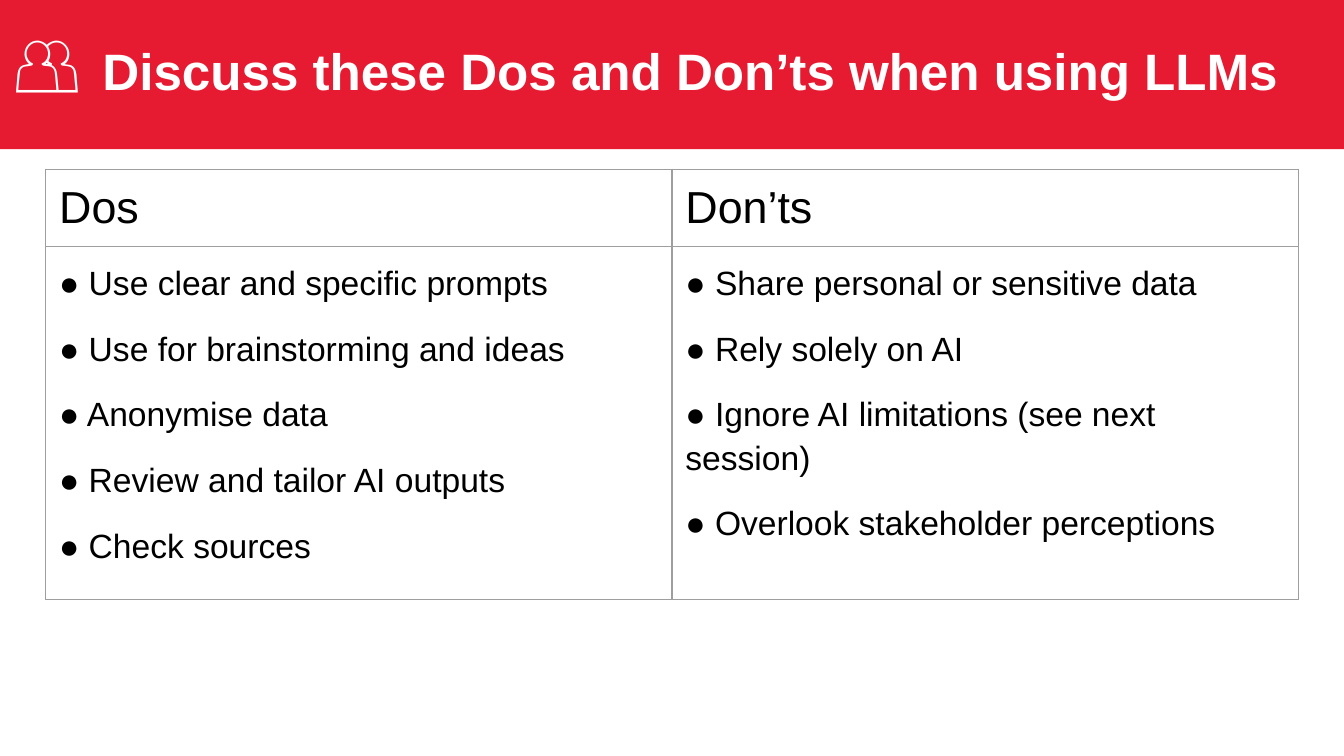
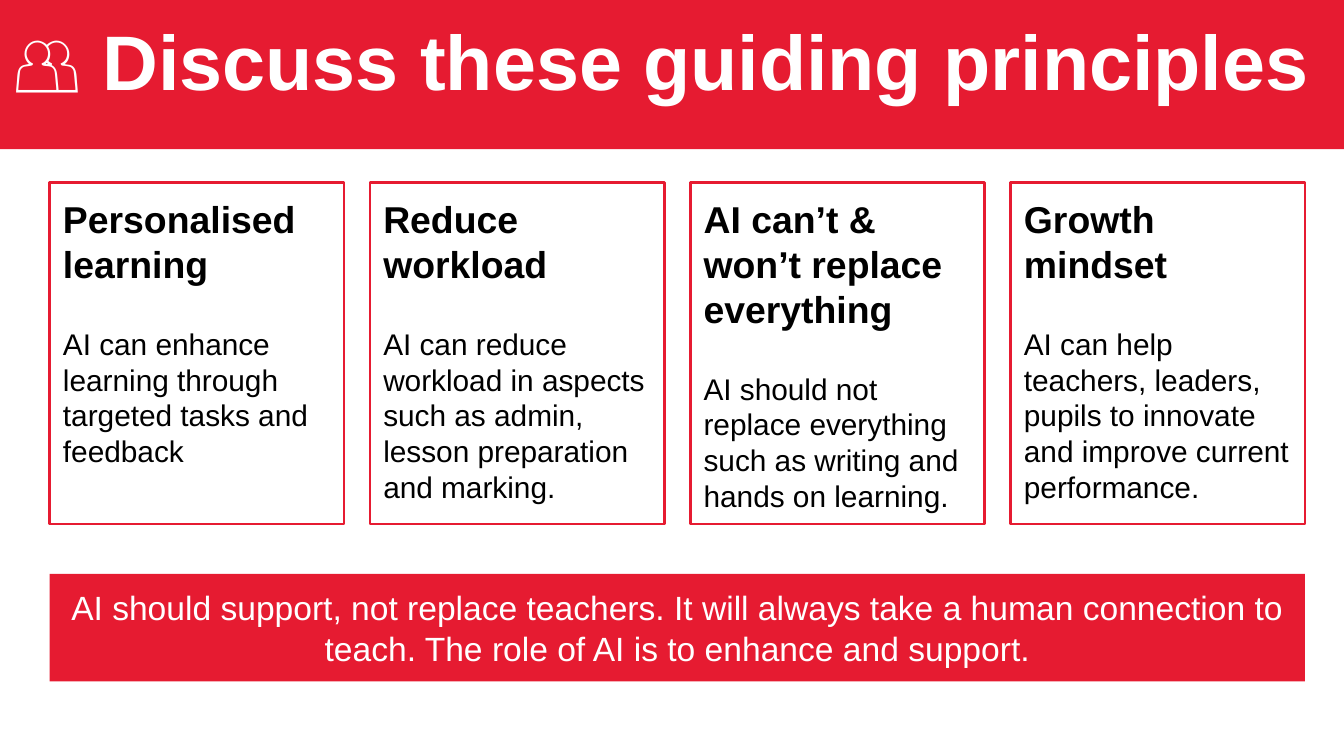
from dataclasses import dataclass

from lxml.etree import SubElement
from pptx import Presentation
from pptx.dml.color import RGBColor
from pptx.enum.shapes import MSO_SHAPE
from pptx.enum.text import MSO_ANCHOR, PP_ALIGN
from pptx.oxml.ns import qn
from pptx.util import Inches, Pt


@dataclass(frozen=True)
class Theme:
    font: str = "Arial"
    red: RGBColor = RGBColor(0xE6, 0x1B, 0x31)
    white: RGBColor = RGBColor(0xFF, 0xFF, 0xFF)
    black: RGBColor = RGBColor(0, 0, 0)
    grid: str = "9E9E9E"
    title: float = 41.4
    long_title: float = 27.4
    column_head: float = 24
    card_head: float = 20
    body: float = 18
    card_body: float = 16
    card_gap: float = 21.2
    bullet_gap: float = 12
    bullet_leading: float = 1.15
    grid_line: float = 0.75
    card_line: float = 1.5


THEME = Theme()
WIDTH = 10
HEIGHT = WIDTH * 9 / 16
BAND_HEIGHT = 1.11
PADDING = Inches(0.1)

ICON = "👥 "
DOS_TITLE = "Discuss these Dos and Don’ts when using LLMs"
ADVICE = {
    "Dos": [
        "Use clear and specific prompts",
        "Use for brainstorming and ideas",
        "Anonymise data",
        "Review and tailor AI outputs",
        "Check sources",
    ],
    "Don’ts": [
        "Share personal or sensitive data",
        "Rely solely on AI",
        "Ignore AI limitations (see next session)",
        "Overlook stakeholder perceptions",
    ],
}
ADVICE_LEFT, ADVICE_TOP = 0.34, 1.26
ADVICE_COLUMN = 4.66
ADVICE_ROWS = (0.57, 2.63)

PRINCIPLES_TITLE = "Discuss these guiding principles"
PRINCIPLES = [
    ("Personalised learning",
     "AI can enhance learning through targeted tasks and feedback"),
    ("Reduce workload",
     "AI can reduce workload in aspects such as admin, lesson preparation and marking."),
    ("AI can’t & won’t replace everything",
     "AI should not replace everything such as writing and hands on learning."),
    ("Growth mindset",
     "AI can help teachers, leaders, pupils to innovate and improve current performance."),
]
SUMMARY = (
    "AI should support, not replace teachers. It will always take a human connection "
    "to teach. The role of AI is to enhance and support."
)
CONTENT_LEFT, CONTENT_WIDTH = 0.37, 9.34
CARD_TOP, CARD_WIDTH, CARD_HEIGHT = 1.36, 2.19, 2.54
SUMMARY_TOP, SUMMARY_HEIGHT = 4.27, 0.8


def style(run, size, color, bold=False):
    run.font.name = THEME.font
    run.font.size = Pt(size)
    run.font.color.rgb = color
    run.font.bold = bold


def pad(area):
    area.margin_left = area.margin_right = PADDING
    area.margin_top = area.margin_bottom = PADDING


def add_panel(slide, left, top, width, height, fill=None, anchor=MSO_ANCHOR.TOP):
    panel = slide.shapes.add_shape(
        MSO_SHAPE.RECTANGLE, Inches(left), Inches(top), Inches(width), Inches(height))
    panel.shadow.inherit = False
    if fill is None:
        panel.fill.background()
        panel.line.color.rgb = THEME.red
        panel.line.width = Pt(THEME.card_line)
    else:
        panel.fill.solid()
        panel.fill.fore_color.rgb = fill
        panel.line.fill.background()
    frame = panel.text_frame
    frame.word_wrap = True
    frame.vertical_anchor = anchor
    pad(frame)
    return frame


def add_slide(deck, title, title_size):
    slide = deck.slides.add_slide(deck.slide_layouts[6])
    heading = add_panel(slide, 0, 0, WIDTH, BAND_HEIGHT, THEME.red).paragraphs[0]
    heading.alignment = PP_ALIGN.LEFT
    for words, size in ((ICON, THEME.title), (title, title_size)):
        run = heading.add_run()
        run.text = words
        style(run, size, THEME.white, bold=True)
    return slide


def add_borders(cell):
    properties = cell._tc.get_or_add_tcPr()
    for index, side in enumerate(("lnL", "lnR", "lnT", "lnB")):
        border = properties.makeelement(qn(f"a:{side}"), {"w": str(Pt(THEME.grid_line))})
        fill = SubElement(border, qn("a:solidFill"))
        SubElement(fill, qn("a:srgbClr"), val=THEME.grid)
        properties.insert(index, border)


def fill_cell(cell, lines, size):
    cell.fill.background()
    pad(cell)
    add_borders(cell)
    cell.text_frame.text = "\n".join(lines)
    for paragraph in cell.text_frame.paragraphs:
        style(paragraph.runs[0], size, THEME.black)
    return cell.text_frame.paragraphs


def add_advice(slide):
    table = slide.shapes.add_table(
        len(ADVICE_ROWS), len(ADVICE), Inches(ADVICE_LEFT), Inches(ADVICE_TOP),
        Inches(ADVICE_COLUMN * len(ADVICE)), Inches(sum(ADVICE_ROWS))).table
    table.first_row = table.horz_banding = False
    for row, height in zip(table.rows, ADVICE_ROWS):
        row.height = Inches(height)
    for column, (heading, tips) in enumerate(ADVICE.items()):
        fill_cell(table.cell(0, column), [heading], THEME.column_head)
        bullets = fill_cell(
            table.cell(1, column), [f"● {tip}" for tip in tips], THEME.body)
        for bullet in bullets:
            bullet.line_spacing = THEME.bullet_leading
        for bullet in bullets[1:]:
            bullet.space_before = Pt(THEME.bullet_gap)


def add_principles(slide):
    pitch = (CONTENT_WIDTH - CARD_WIDTH) / (len(PRINCIPLES) - 1)
    for index, (heading, detail) in enumerate(PRINCIPLES):
        card = add_panel(
            slide, CONTENT_LEFT + index * pitch, CARD_TOP, CARD_WIDTH, CARD_HEIGHT)
        card.text = f"{heading}\n{detail}"
        head, body = card.paragraphs
        head.alignment = body.alignment = PP_ALIGN.LEFT
        head.space_after = Pt(THEME.card_gap)
        style(head.runs[0], THEME.card_head, THEME.black, bold=True)
        style(body.runs[0], THEME.card_body, THEME.black)


def add_summary(slide):
    summary = add_panel(
        slide, CONTENT_LEFT, SUMMARY_TOP, CONTENT_WIDTH, SUMMARY_HEIGHT,
        THEME.red, MSO_ANCHOR.MIDDLE)
    summary.text = SUMMARY
    summary.paragraphs[0].alignment = PP_ALIGN.CENTER
    style(summary.paragraphs[0].runs[0], THEME.body, THEME.white)


def main():
    deck = Presentation()
    deck.slide_width, deck.slide_height = Inches(WIDTH), Inches(HEIGHT)
    add_advice(add_slide(deck, DOS_TITLE, THEME.long_title))
    principles = add_slide(deck, PRINCIPLES_TITLE, THEME.title)
    add_principles(principles)
    add_summary(principles)
    deck.save("out.pptx")


if __name__ == "__main__":
    main()
